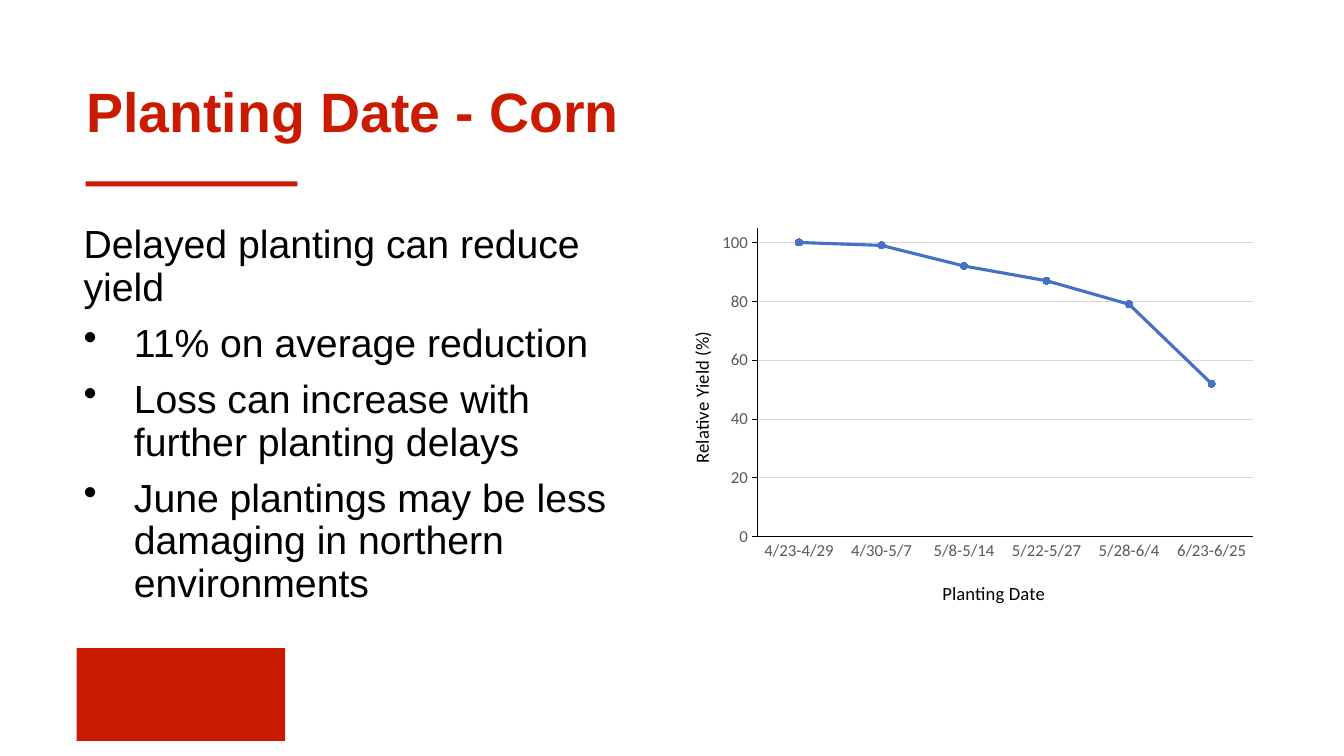
from dataclasses import dataclass

import lxml.etree
import pptx
import pptx.chart.axis
import pptx.chart.data
import pptx.dml.color
import pptx.enum.chart
import pptx.enum.shapes
import pptx.enum.text
import pptx.oxml
import pptx.oxml.ns
import pptx.slide
import pptx.util

Pt = pptx.util.Pt
Color = pptx.dml.color.RGBColor


@dataclass(frozen=True)
class Theme:
    red: Color = Color.from_string("CA1B00")
    black: Color = Color.from_string("000000")
    axis_gray: Color = Color.from_string("595959")
    grid_gray: Color = Color.from_string("D9D9D9")
    blue: Color = Color.from_string("4472C4")
    text_font: str = "Arial"
    chart_font: str = "Calibri"
    title_size: float = 39.6
    body_size: float = 28
    axis_title_size: float = 13.3
    tick_size: float = 12


@dataclass(frozen=True)
class Area:
    left: float
    top: float
    width: float
    height: float


@dataclass(frozen=True)
class Line:
    text: str
    size: float
    color: Color
    bold: bool = False
    bullet: bool = False


@dataclass(frozen=True)
class AxisStyle:
    title: str
    left: float
    top: float
    rotation: int
    tick_mark: pptx.enum.chart.XL_TICK_MARK


THEME = Theme()
RED_BARS = [Area(61.2, 129.6, 151.2, 3.6), Area(54.7, 463, 149, 66.2)]
TITLE_AREA = Area(54.7, 56.2, 848.9, 51.8)
BODY_AREA = Area(52.6, 157, 401, 286.6)
CHART_AREA = Area(472.3, 157, 431.3, 286.6)
TITLE = Line("Planting Date - Corn", THEME.title_size, THEME.red, bold=True)
BODY = [
    Line("Delayed planting can reduce yield", THEME.body_size, THEME.black),
    *(
        Line(text, THEME.body_size, THEME.black, bullet=True)
        for text in (
            "11% on average reduction",
            "Loss can increase with further planting delays",
            "June plantings may be less damaging in northern environments",
        )
    ),
]
YIELDS = {
    "4/23-4/29": 100,
    "4/30-5/7": 99,
    "5/8-5/14": 92,
    "5/22-5/27": 87,
    "5/28-6/4": 79,
    "6/23-6/25": 52,
}
DATE_AXIS = AxisStyle("Planting Date", 0.46, 0.89, 0, pptx.enum.chart.XL_TICK_MARK.NONE)
YIELD_AXIS = AxisStyle("Relative Yield (%)", 0.04, 0.27, -5400000, pptx.enum.chart.XL_TICK_MARK.OUTSIDE)


def place(area: Area) -> tuple:
    return Pt(area.left), Pt(area.top), Pt(area.width), Pt(area.height)


def add_bar(page: pptx.slide.Slide, area: Area) -> None:
    bar = page.shapes.add_shape(pptx.enum.shapes.MSO_SHAPE.RECTANGLE, *place(area))
    bar.shadow.inherit = False
    bar.fill.solid()
    bar.fill.fore_color.rgb = THEME.red
    bar.line.fill.background()


def add_text(
    page: pptx.slide.Slide, area: Area, lines: list[Line], anchor: pptx.enum.text.MSO_ANCHOR
) -> None:
    frame = page.shapes.add_textbox(*place(area)).text_frame
    frame.word_wrap = True
    frame.vertical_anchor = anchor
    for index, line in enumerate(lines):
        para = frame.add_paragraph() if index else frame.paragraphs[0]
        para.text = line.text
        para.line_spacing = 0.9
        if index:
            para.space_before = Pt(10)
        if line.bullet:
            properties = para._p.get_or_add_pPr()
            properties.set("marL", str(Pt(36)))
            properties.set("indent", str(-Pt(36)))
            bullet = lxml.etree.SubElement(properties, pptx.oxml.ns.qn("a:buChar"))
            bullet.set("char", "•")
        para.font.name = THEME.text_font
        para.font.size = Pt(line.size)
        para.font.bold = line.bold
        para.font.color.rgb = line.color


def set_layout(element: lxml.etree.ElementBase, index: int, **settings: object) -> None:
    """Give a chart part a manual layout, in fractions of the chart, as child number index."""
    for old in element.findall(pptx.oxml.ns.qn("c:layout")):
        element.remove(old)
    entries = "".join(f'<c:{name} val="{value}"/>' for name, value in settings.items())
    namespace = pptx.oxml.ns.nsdecls("c")
    layout = f"<c:layout {namespace}><c:manualLayout>{entries}</c:manualLayout></c:layout>"
    element.insert(index, pptx.oxml.parse_xml(layout))


def style_axis(axis: pptx.chart.axis._BaseAxis, style: AxisStyle) -> None:
    axis.major_tick_mark = style.tick_mark
    axis.minor_tick_mark = pptx.enum.chart.XL_TICK_MARK.NONE
    axis.format.line.color.rgb = THEME.black
    axis.format.line.width = Pt(0.75)
    axis.tick_labels.font.name = THEME.chart_font
    axis.tick_labels.font.size = Pt(THEME.tick_size)
    axis.tick_labels.font.color.rgb = THEME.axis_gray
    title = axis.axis_title
    para = title.text_frame.paragraphs[0]
    para.text = style.title
    para.font.name = THEME.chart_font
    para.font.size = Pt(THEME.axis_title_size)
    para.font.bold = False
    para.font.color.rgb = THEME.black
    body = title.element.xpath(".//a:bodyPr")[0]
    body.set("rot", str(style.rotation))
    body.set("vert", "horz")
    set_layout(title.element, 1, xMode="edge", yMode="edge", x=style.left, y=style.top)


def add_yield_chart(page: pptx.slide.Slide) -> None:
    data = pptx.chart.data.CategoryChartData()
    data.categories = list(YIELDS)
    data.add_series("Series 1", list(YIELDS.values()))
    kind = pptx.enum.chart.XL_CHART_TYPE.LINE_MARKERS
    chart = page.shapes.add_chart(kind, *place(CHART_AREA), data).chart
    chart.has_title = False
    chart.has_legend = False
    chart.font.name = THEME.chart_font
    chart.font.size = Pt(10)
    chart.font.color.rgb = THEME.black
    style_axis(chart.category_axis, DATE_AXIS)
    style_axis(chart.value_axis, YIELD_AXIS)
    chart.value_axis.minimum_scale = 0
    chart.value_axis.maximum_scale = 105
    chart.value_axis.major_unit = 20
    grid = chart.value_axis.major_gridlines.format.line
    grid.color.rgb = THEME.grid_gray
    grid.width = Pt(0.75)
    plot = chart.plots[0]
    plot.vary_by_categories = False
    series = plot.series[0]
    series.smooth = False
    series.format.line.color.rgb = THEME.blue
    series.format.line.width = Pt(2.25)
    series.marker.style = pptx.enum.chart.XL_MARKER_STYLE.CIRCLE
    series.marker.size = 5
    series.marker.format.fill.solid()
    series.marker.format.fill.fore_color.rgb = THEME.blue
    series.marker.format.line.color.rgb = THEME.blue
    plot_area = chart.element.xpath(".//c:plotArea")[0]
    set_layout(
        plot_area, 0, layoutTarget="inner", xMode="edge", yMode="edge", x=0.16, y=0.02, w=0.82, h=0.77
    )


def main() -> None:
    deck = pptx.Presentation()
    deck.slide_width, deck.slide_height = Pt(960), Pt(540)
    page = deck.slides.add_slide(deck.slide_layouts[6])
    for area in RED_BARS:
        add_bar(page, area)
    add_text(page, TITLE_AREA, [TITLE], pptx.enum.text.MSO_ANCHOR.MIDDLE)
    add_text(page, BODY_AREA, BODY, pptx.enum.text.MSO_ANCHOR.TOP)
    add_yield_chart(page)
    deck.save("out.pptx")


if __name__ == "__main__":
    main()
